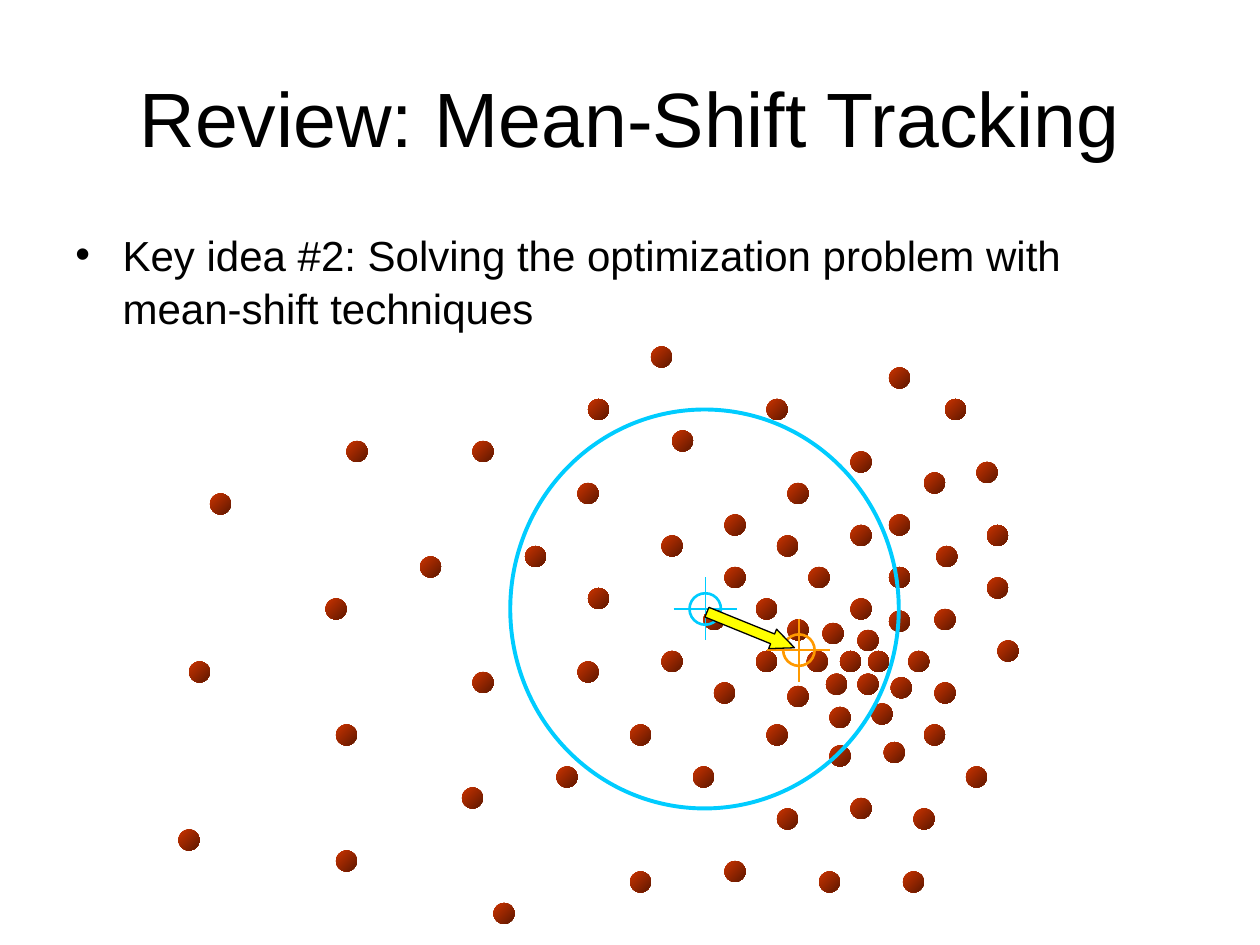
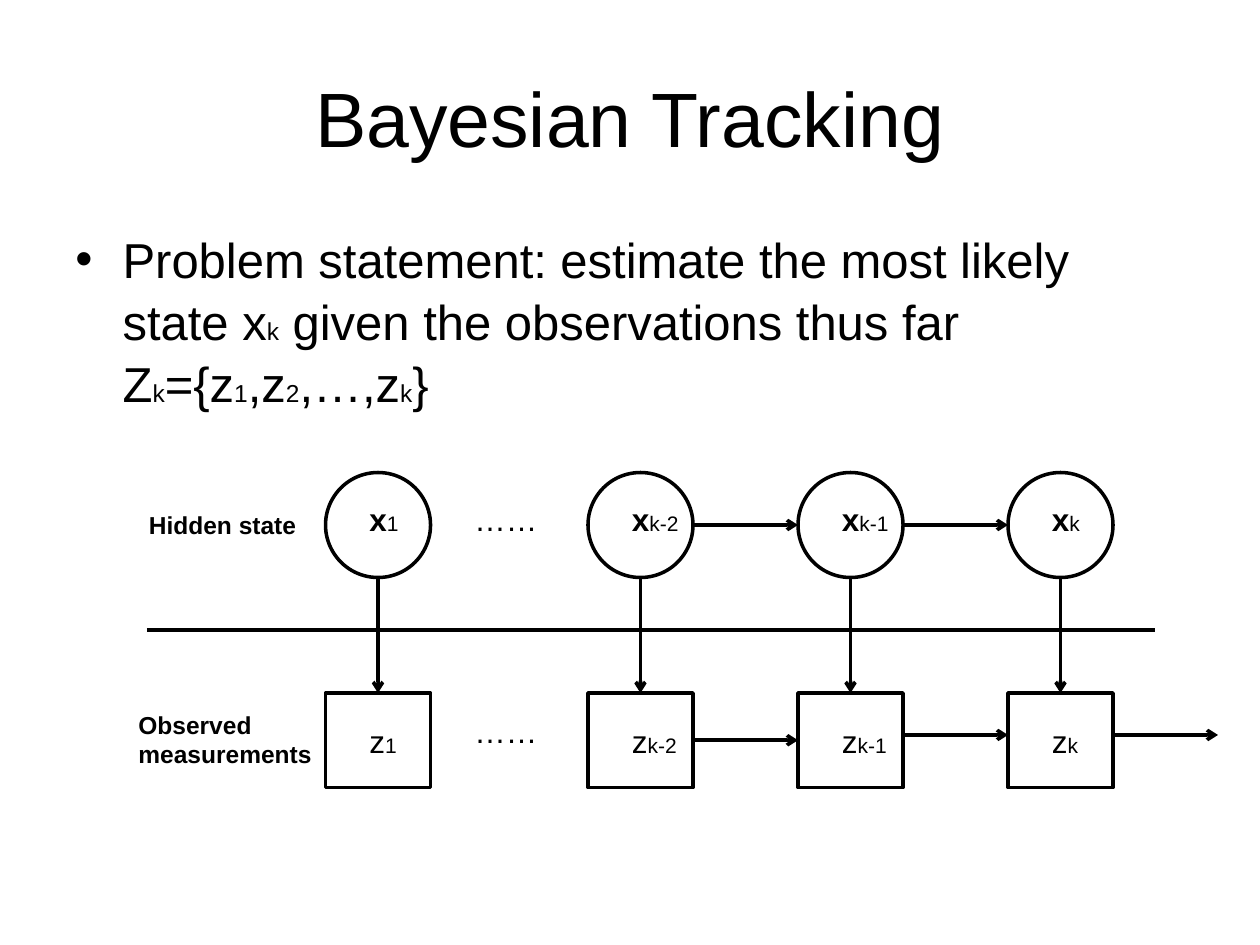
"""Build two slides on mean-shift and Bayesian tracking."""
import pptx
import pptx.util
import pptx.dml.color
import pptx.enum.shapes
import pptx.enum.text
import pptx.oxml
import pptx.oxml.ns

Pt = pptx.util.Pt
MSO = pptx.enum.shapes.MSO_SHAPE
ANCHOR = pptx.enum.text.MSO_ANCHOR
ALIGN = pptx.enum.text.PP_ALIGN
FONT = "Arial"
BLACK, WHITE, YELLOW = "000000", "FFFFFF", "FFFF00"
CYAN, ORANGE = "00CCFF", "FF9900"
DOT_LIGHT, DOT_DARK = "CC3300", "5E1800"
DOT_SIZE = 12

SAMPLES = [
    (480, 372), (496, 372), (490, 360), (470, 356), (490, 385), (472, 385),
    (509, 387), (461, 372), (519, 372), (508, 349), (486, 342), (498, 402),
    (474, 404), (450, 392), (432, 372), (450, 354), (534, 390), (528, 414),
    (505, 424), (474, 426), (438, 414), (408, 390), (402, 348), (432, 342),
    (462, 324), (508, 324), (486, 300), (414, 324), (444, 306), (486, 258),
    (450, 276), (508, 294), (508, 210), (528, 270), (535, 312), (534, 348),
    (564, 330), (564, 300), (558, 264), (540, 228), (570, 366), (552, 438),
    (522, 462), (486, 456), (516, 498), (468, 498), (444, 462), (396, 438),
    (414, 492), (360, 498), (318, 438), (360, 414), (378, 372), (336, 336),
    (378, 306), (414, 294), (384, 246), (438, 228), (372, 198), (336, 228),
    (330, 276), (300, 312), (330, 378), (270, 384), (264, 450), (282, 516),
    (192, 486), (192, 414), (240, 318), (270, 252), (198, 252), (186, 342),
    (102, 474), (108, 378), (120, 282),
]


def rgb(value):
    return pptx.dml.color.RGBColor.from_string(value)


def append_xml(parent, tag, **attrs):
    element = pptx.oxml.parse_xml(f'<a:{tag} {pptx.oxml.ns.nsdecls("a")}/>')
    for name, value in attrs.items():
        element.set(name, value)
    parent.append(element)


class Deck:
    def __init__(self):
        self.prs = pptx.Presentation()
        self.prs.slide_width, self.prs.slide_height = Pt(720), Pt(540)
        self.s = None

    def slide(self, title):
        self.s = self.prs.slides.add_slide(self.prs.slide_layouts[5])
        sp = self.s.shapes.title
        sp.left, sp.top, sp.width, sp.height = Pt(36), Pt(21.6), Pt(648), Pt(90)
        tf = sp.text_frame
        tf.text = title
        tf.vertical_anchor = ANCHOR.MIDDLE
        p = tf.paragraphs[0]
        p.alignment = ALIGN.CENTER
        self.style(p.runs[0], 44)

    def style(self, r, size, bold=False):
        r.font.name, r.font.size, r.font.bold = FONT, Pt(size), bold
        r.font.color.rgb = rgb(BLACK)

    def text(self, x, y, w, h, *runs):
        sp = self.s.shapes.add_textbox(Pt(x), Pt(y), Pt(w), Pt(h))
        tf = sp.text_frame
        tf.word_wrap = True
        p = tf.paragraphs[0]
        for text, size, bold in runs:
            r = p.add_run()
            r.text = text
            self.style(r, size, bold)
        return p

    def bullet(self, size, *parts):
        """Add the body bullet, with every second part set at half size."""
        runs = [(part, size / (1 + i % 2), False) for i, part in enumerate(parts)]
        p = self.text(36, 126, 648, 356.4, *runs)
        p.space_before, p.line_spacing = Pt(size * 0.1), 1.05
        pPr = p._p.get_or_add_pPr()
        pPr.set("marL", str(Pt(27)))
        pPr.set("indent", str(Pt(-27)))
        append_xml(pPr, "buFont", typeface=FONT)
        append_xml(pPr, "buChar", char="•")

    def shape(self, kind, x, y, w, h, fill=None, line=None, weight=2):
        sp = self.s.shapes.add_shape(kind, Pt(x), Pt(y), Pt(w), Pt(h))
        sp.shadow.inherit = False
        if fill:
            sp.fill.solid()
            sp.fill.fore_color.rgb = rgb(fill)
        else:
            sp.fill.background()
        if line:
            sp.line.color.rgb = rgb(line)
            sp.line.width = Pt(weight)
        else:
            sp.line.fill.background()
        return sp

    def dot(self, x, y):
        sp = self.shape(MSO.OVAL, x, y, DOT_SIZE, DOT_SIZE)
        sp.fill.gradient()
        sp.fill.gradient_angle = 315
        for stop, color in zip(sp.fill.gradient_stops, (DOT_LIGHT, DOT_DARK)):
            stop.color.rgb = rgb(color)

    def line(self, x1, y1, x2, y2, color=BLACK, weight=2.0, arrow=False):
        straight = pptx.enum.shapes.MSO_CONNECTOR.STRAIGHT
        sp = self.s.shapes.add_connector(straight, Pt(x1), Pt(y1), Pt(x2), Pt(y2))
        sp.line.color.rgb = rgb(color)
        sp.line.width = Pt(weight)
        if arrow:
            append_xml(sp.line._get_or_add_ln(), "tailEnd", type="arrow")
        append_xml(sp._element.spPr, "effectLst")

    def target(self, x, y, color, radius=9, reach=18):
        self.shape(MSO.OVAL, x - radius, y - radius, 2 * radius, 2 * radius,
                   line=color, weight=1.5)
        self.line(x, y - reach, x, y + reach, color, 0.75)
        self.line(x - reach, y, x + reach, y, color, 0.75)


def mean_shift_slide(deck):
    deck.slide("Review: Mean-Shift Tracking")
    deck.bullet(24, "Key idea #2: Solving the optimization problem with "
                    "mean-shift techniques")
    for x, y in SAMPLES:
        deck.dot(x, y)
    deck.shape(MSO.OVAL, 291.6, 234, 222, 228, line=CYAN, weight=2.25)
    deck.target(403, 348, CYAN)
    deck.target(456.5, 371.5, ORANGE)
    shift = deck.shape(MSO.RIGHT_ARROW, 402, 354, 54, 12, YELLOW, BLACK, 0.75)
    shift.adjustments[0], shift.adjustments[1] = 0.5, 1.125
    shift.rotation = 22.1


def bayesian_slide(deck):
    deck.slide("Bayesian Tracking")
    deck.bullet(28, "Problem statement: estimate the most likely state x", "k",
                " given the observations thus far Z", "k", "={z", "1", ",z", "2",
                ",…,z", "k", "}")
    node, gap, state_y, measure_y, measure_h = 60, 60, 270, 396, 54
    steps = [("1", 186, 42), ("k-2", 336, 54), ("k-1", 456, 48), ("k", 576, 42)]
    for index, x, label_w in steps:
        middle = x + node / 2
        deck.shape(MSO.OVAL, x, state_y, node, node, WHITE, BLACK)
        deck.shape(MSO.RECTANGLE, x, measure_y, node, measure_h, WHITE, BLACK)
        deck.line(middle, state_y + node, middle, measure_y, arrow=True)
        for name, y, bold in (("x", 282, True), ("z", 409, False)):
            deck.text(x + 18, y, label_w, 28.8, (name, 18, bold), (index, 12, False))
    arrows = [(336, 300), (456, 300), (336, 423), (456, 420), (576, 420)]
    for x, y in arrows:
        deck.line(x + node, y, x + node + gap, y, arrow=True)
    for y in (282, 403.2):
        deck.text(264, y, 66, 28.8, ("……", 18, False))
    deck.line(84, 360, 660, 360, weight=2.5)
    deck.text(78, 288, 102, 24.5, ("Hidden state", 14, True))
    deck.text(72, 402, 114, 41, ("Observed measurements", 14, True))


def main():
    deck = Deck()
    mean_shift_slide(deck)
    bayesian_slide(deck)
    deck.prs.save("out.pptx")


if __name__ == "__main__":
    main()
